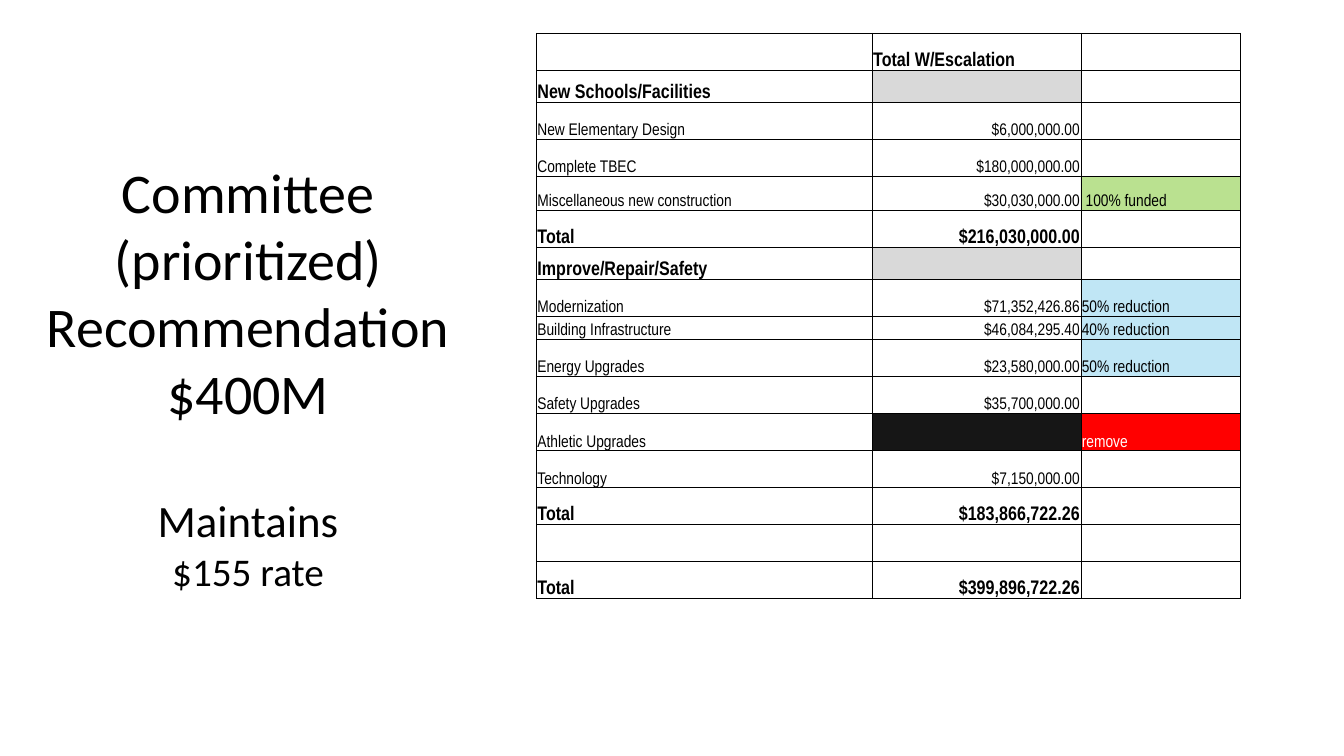
from lxml import etree
from pptx import Presentation
from pptx.dml.color import RGBColor
from pptx.enum.text import MSO_ANCHOR, MSO_AUTO_SIZE, PP_ALIGN
from pptx.oxml import parse_xml
from pptx.oxml.ns import nsdecls, qn
from pptx.util import Inches, Pt

BLACK = RGBColor(0x00, 0x00, 0x00)
WHITE = RGBColor(0xFF, 0xFF, 0xFF)
GRAY = RGBColor(0xD9, 0xD9, 0xD9)
GREEN = RGBColor(0x92, 0xD0, 0x50)
BLUE = RGBColor(0xC0, 0xE6, 0xF5)
DARK = RGBColor(0x16, 0x16, 0x16)
RED = RGBColor(0xFF, 0x00, 0x00)


def add_borders(cell):
    tcPr = cell._tc.get_or_add_tcPr()
    for i, side in enumerate(("lnL", "lnR", "lnT", "lnB")):
        tcPr.insert(i, parse_xml(
            f'<a:{side} {nsdecls("a")} w="{Pt(0.5)}"><a:solidFill>'
            f'<a:srgbClr val="{BLACK}"/></a:solidFill></a:{side}>'))


prs = Presentation()
prs.slide_width, prs.slide_height = Inches(13.33), Inches(7.5)
s = prs.slides.add_slide(prs.slide_layouts[5])

# Title
sp = s.shapes.title
sp.left, sp.top, sp.width, sp.height = Inches(0.35), Inches(1.51), Inches(4.22), Inches(5.15)
tf = sp.text_frame
tf.word_wrap = True
tf.auto_size = MSO_AUTO_SIZE.NONE
tf.vertical_anchor = MSO_ANCHOR.TOP
title_lines = [("Committee (prioritized) Recommendation", 40, 0), ("$400M", 40, 0),
               ("Maintains", 32, 48), ("$155 rate", 28, 0)]
for i, (text, size, gap) in enumerate(title_lines):
    p = tf.paragraphs[0] if i == 0 else tf.add_paragraph()
    p.text = text
    p.alignment = PP_ALIGN.CENTER
    p.space_before = Pt(gap)
    r = p.runs[0]
    r.font.size = Pt(size)
    r.font.name = "Calibri"
    r.font.color.rgb = BLACK

# Budget rows: height, item, amount, note
budget = [
    (0.37, "", "Total W/Escalation", ""),
    (0.32, "New Schools/Facilities", "", ""),
    (0.37, "New Elementary Design", "$6,000,000.00", ""),
    (0.37, "Complete TBEC", "$180,000,000.00", ""),
    (0.34, "Miscellaneous new construction", "$30,030,000.00", " 100% funded"),
    (0.37, "Total", "$216,030,000.00", ""),
    (0.32, "Improve/Repair/Safety", "", ""),
    (0.37, "Modernization", "$71,352,426.86", "50% reduction"),
    (0.23, "Building Infrastructure", "$46,084,295.40", "40% reduction"),
    (0.37, "Energy Upgrades", "$23,580,000.00", "50% reduction"),
    (0.37, "Safety Upgrades", "$35,700,000.00", ""),
    (0.37, "Athletic Upgrades", "", "remove"),
    (0.37, "Technology", "$7,150,000.00", ""),
    (0.37, "Total", "$183,866,722.26", ""),
    (0.37, "", "", ""),
    (0.37, "Total", "$399,896,722.26", ""),
]
bold_rows = {0, 1, 5, 6, 13, 15}
fills = {(1, 1): GRAY, (6, 1): GRAY, (4, 2): GREEN, (7, 2): BLUE,
         (8, 2): BLUE, (9, 2): BLUE, (11, 1): DARK, (11, 2): RED}

# Budget table
table_height = Inches(5.61)
height_sum = sum(row[0] for row in budget)
table = s.shapes.add_table(len(budget), 3, Inches(5.32), Inches(0.33),
                           Inches(6.98), table_height).table
table.first_row = table.horz_banding = False
for column, width in zip(table.columns, (3.33, 2.07, 1.58)):
    column.width = Inches(width)

for i, (height, *texts) in enumerate(budget):
    table.rows[i].height = int(table_height * height / height_sum)
    for j, text in enumerate(texts):
        cell = table.cell(i, j)
        cell.margin_left = cell.margin_right = cell.margin_top = Inches(0.01)
        cell.margin_bottom = 0
        cell.vertical_anchor = MSO_ANCHOR.BOTTOM
        p = cell.text_frame.paragraphs[0]
        if text:
            p.text = text
            if j == 1 and i > 0:
                p.alignment = PP_ALIGN.RIGHT
            r = p.runs[0]
            r.font.name = "Arial Narrow"
            r.font.size = Pt(14 if i in bold_rows else 12)
            r.font.bold = i in bold_rows
            r.font.color.rgb = WHITE if text == "remove" else BLACK
        else:
            # Small end mark keeps blank cells from stretching the row
            etree.SubElement(p._p, qn("a:endParaRPr")).set("sz", "1200")
        color = fills.get((i, j))
        if color is None:
            cell.fill.background()
        else:
            cell.fill.solid()
            cell.fill.fore_color.rgb = color
        if color == GREEN:
            clr = cell._tc.tcPr.find(".//" + qn("a:srgbClr"))
            etree.SubElement(clr, qn("a:alpha")).set("val", "63000")
        add_borders(cell)

prs.save("out.pptx")
